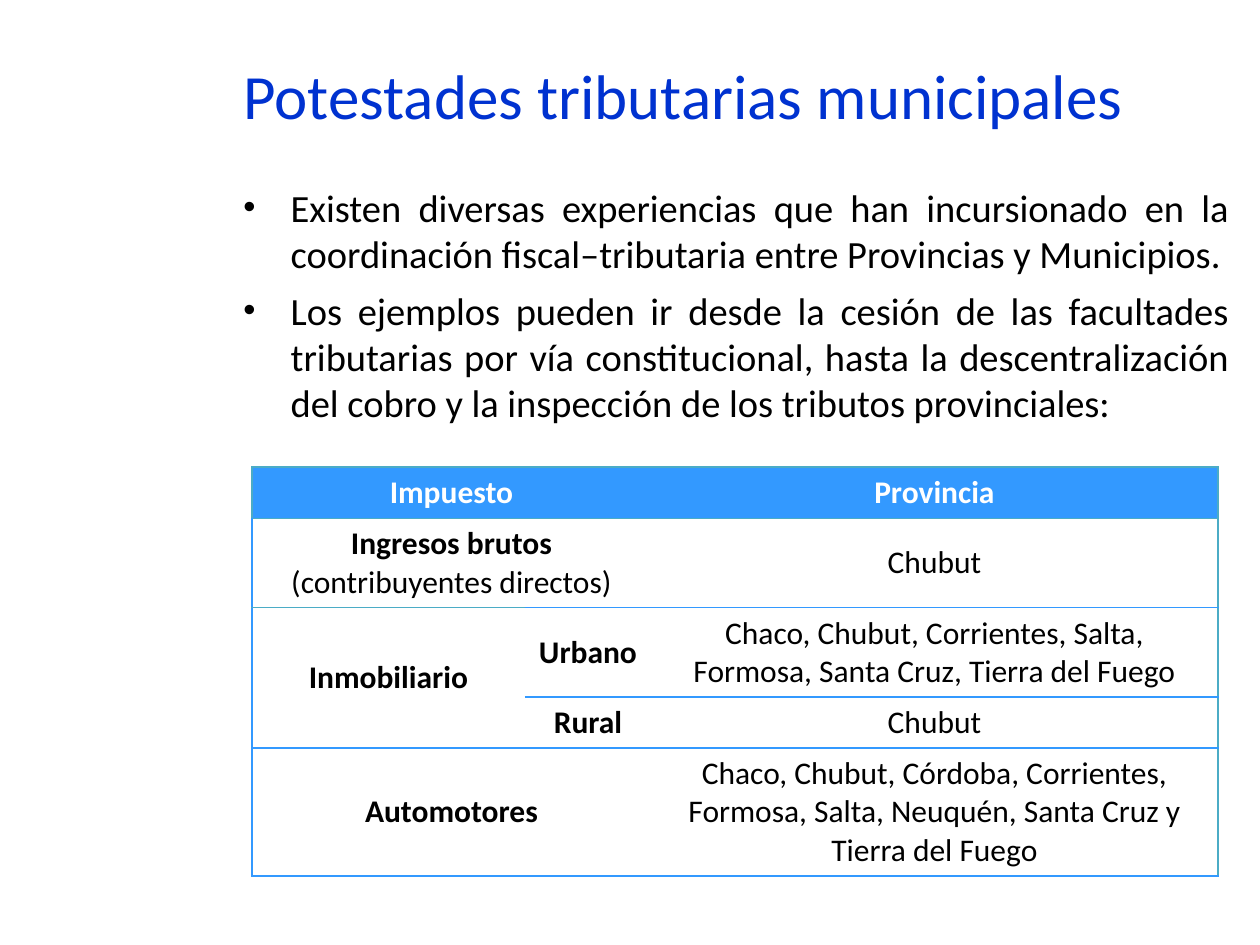
"""Build the slide on municipal tax powers with its table of taxes by province."""
import pptx
import pptx.dml.color
import pptx.enum.text
import pptx.oxml.ns
import pptx.util
from lxml import etree

Pt = pptx.util.Pt
ALIGN = pptx.enum.text.PP_ALIGN
ANCHOR = pptx.enum.text.MSO_ANCHOR
COLORS = {"title": "0032D0", "text": "000000", "white": "FFFFFF",
          "blue": "3399FF", "teal": "4BACC6"}
BULLETS = [
    "Existen diversas experiencias que han incursionado en la coordinación "
    "fiscal–tributaria entre Provincias y Municipios.",
    "Los ejemplos pueden ir desde la cesión de las facultades tributarias por vía "
    "constitucional, hasta la descentralización del cobro y la inspección de los "
    "tributos provinciales:",
]
ROWS = [
    ["Impuesto", "", "Provincia"],
    ["Ingresos brutos ", "", "Chubut"],
    ["Inmobiliario", "Urbano",
     "Chaco, Chubut, Corrientes, Salta, Formosa, Santa Cruz, Tierra del Fuego"],
    ["", "Rural", "Chubut"],
    ["Automotores", "", "Chaco, Chubut, Córdoba, Corrientes, Formosa, Salta, "
     "Neuquén, Santa Cruz y Tierra del Fuego"],
]
COLUMN_WIDTHS = [156, 72, 324]
ROW_HEIGHTS = [29.2, 51.1, 51.1, 29.2, 73]
MERGES = [(0, 0, 0, 1), (1, 0, 1, 1), (2, 0, 3, 0), (4, 0, 4, 1)]


def style_run(run, size, color, bold=False):
    run.font.name = "Calibri"
    run.font.size = Pt(size)
    run.font.bold = bold
    run.font.color.rgb = pptx.dml.color.RGBColor.from_string(COLORS[color])


def add_element(parent, tag, **attributes):
    return etree.SubElement(parent, pptx.oxml.ns.qn(tag), attributes)


presentation = pptx.Presentation()
presentation.slide_width = Pt(720)
presentation.slide_height = Pt(540)
slide = presentation.slides.add_slide(presentation.slide_layouts[6])

title = slide.shapes.add_textbox(Pt(132), Pt(6), Pt(552), Pt(96))
title.text_frame.word_wrap = True
title.text_frame.vertical_anchor = ANCHOR.MIDDLE
title.text_frame.text = "Potestades tributarias municipales"
style_run(title.text_frame.paragraphs[0].runs[0], 36, "title")

table_frame = slide.shapes.add_table(
    len(ROWS), len(COLUMN_WIDTHS), Pt(144), Pt(267), Pt(552), Pt(sum(ROW_HEIGHTS)))
table = table_frame.table
table.horz_banding = False
for column, width in zip(table.columns, COLUMN_WIDTHS):
    column.width = Pt(width)
for row, height in zip(table.rows, ROW_HEIGHTS):
    row.height = Pt(height)
for top, left, bottom, right in MERGES:
    table.cell(top, left).merge(table.cell(bottom, right))

for row_index, texts in enumerate(ROWS):
    header = row_index == 0
    for column_index, text in enumerate(texts):
        cell = table.cell(row_index, column_index)
        teal_top = row_index < 2 or (row_index, column_index) == (2, 0)
        teal_bottom = header or (row_index, column_index) == (1, 0)
        borders = {
            "a:lnL": ("teal" if header else "blue") if column_index == 0 else None,
            "a:lnR": "teal" if column_index == 2 else None,
            "a:lnT": "teal" if teal_top else "blue",
            "a:lnB": "teal" if teal_bottom else "blue",
        }
        if (row_index, column_index) == (3, 0):
            borders["a:lnT"] = None
        properties = cell._tc.get_or_add_tcPr()
        for tag, color in borders.items():
            line = add_element(properties, tag, w=str(Pt(1)))
            if color:
                fill = add_element(line, "a:solidFill")
                add_element(fill, "a:srgbClr", val=COLORS[color])
            else:
                add_element(line, "a:noFill")
        cell.fill.solid()
        cell.fill.fore_color.rgb = pptx.dml.color.RGBColor.from_string(
            COLORS["blue" if header else "white"])
        if not header:
            color_element = properties.find(
                pptx.oxml.ns.qn("a:solidFill")).find(pptx.oxml.ns.qn("a:srgbClr"))
            add_element(color_element, "a:alpha", val="60000")
            cell.vertical_anchor = ANCHOR.MIDDLE
        if text:
            cell.text_frame.text = text
            paragraph = cell.text_frame.paragraphs[0]
            paragraph.alignment = ALIGN.CENTER
            style_run(paragraph.runs[0], 18, "white" if header else "text",
                      header or column_index < 2)

note = table.cell(1, 0).text_frame.paragraphs[0].add_run()
note.text = "(contribuyentes directos)"
style_run(note, 18, "text")

body = slide.shapes.add_textbox(Pt(132), Pt(101.5), Pt(577.5), Pt(147))
body.text_frame.word_wrap = True
body.text_frame.text = "\n".join(BULLETS)
for index, paragraph in enumerate(body.text_frame.paragraphs):
    paragraph.alignment = ALIGN.JUSTIFY
    paragraph.space_before = Pt(6 if index else 0)
    properties = paragraph._p.get_or_add_pPr()
    properties.set("marL", str(Pt(27)))
    properties.set("indent", str(Pt(-27)))
    add_element(properties, "a:buSzPct", val="90000")
    add_element(properties, "a:buFont", typeface="Arial")
    add_element(properties, "a:buChar", char="•")
    style_run(paragraph.runs[0], 22, "text")

presentation.save("out.pptx")
